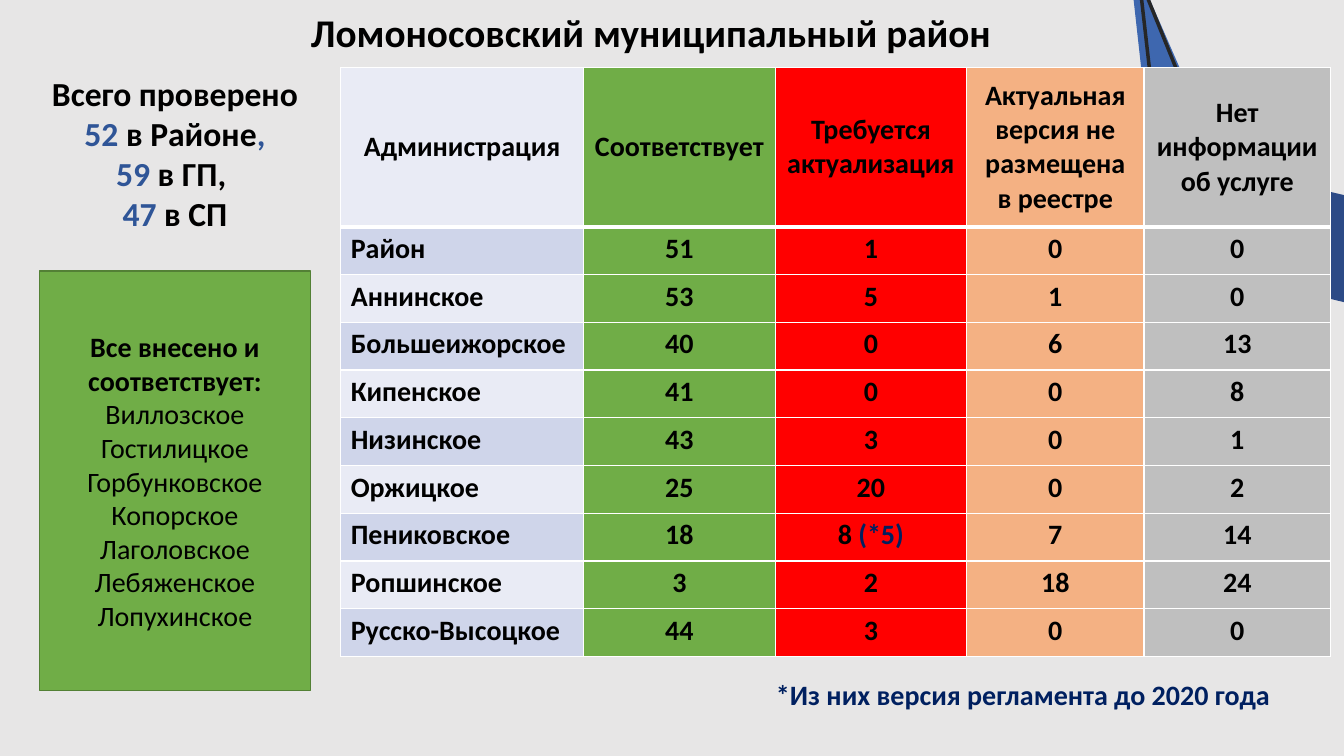
"""Build the district audit slide: a results table, two side panels and a footnote."""
import lxml.etree
import pptx
import pptx.dml.color
import pptx.enum.shapes
import pptx.enum.text
import pptx.oxml.ns
import pptx.util
from dataclasses import dataclass
from typing import Any, NamedTuple

WIDTH, HEIGHT = pptx.util.Inches(13.333), pptx.util.Inches(7.5)
FONT = "Calibri"
BLACK, WHITE, NAVY, BLUE = "000000", "FFFFFF", "002060", "2F5597"
GREEN, RED, PEACH, GREY = "70AD47", "FF0000", "F4B183", "BFBFBF"
PALE, DARK = "E9EBF5", "CFD5EA"
ALIGN = pptx.enum.text.PP_ALIGN
FIT = pptx.enum.text.MSO_AUTO_SIZE
MIDDLE = pptx.enum.text.MSO_ANCHOR.MIDDLE


class Run(NamedTuple):
    text: str
    color: str = BLACK
    bold: bool = True


class Box(NamedTuple):
    left: float
    top: float
    width: float
    height: float


class Column(NamedTuple):
    head: str
    width: float
    fill: str


@dataclass
class Label:
    box: Box
    lines: list[list[Run]]
    size: int
    align: Any = ALIGN.CENTER
    wrap: bool = True


@dataclass
class Shard:
    points: list[tuple[float, float]]
    fill: str = ""
    line: str = ""


SHARDS = [
    Shard([(109.73, 29.87), (90.9, 22), (86.48, 34.13), (107.48, 43.2)], fill="2C4A86"),
    Shard([(86.48, 34.13), (83.93, -6.67), (94.8, 37.6)], fill="3E67AF"),
    Shard([(87.15, 34.53), (84.75, -3.07), (94.28, 38.8)], line="262626"),
]

COLUMNS = [
    Column("Администрация", 18.08, PALE),
    Column("Соответствует", 14.25, GREEN),
    Column("Требуется актуализация", 14.25, RED),
    Column("Актуальная версия не размещена в реестре", 13.2, PEACH),
    Column("Нет информации об услуге", 13.88, GREY),
]
ROWS = [
    ("Район", 51, 1, 0, 0),
    ("Аннинское", 53, 5, 1, 0),
    ("Большеижорское", 40, 0, 6, 13),
    ("Кипенское", 41, 0, 0, 8),
    ("Низинское", 43, 3, 0, 1),
    ("Оржицкое", 25, 20, 0, 2),
    ("Пениковское", 18, [Run("8 "), Run("(*5)", NAVY)], 7, 14),
    ("Ропшинское", 3, 2, 18, 24),
    ("Русско-Высоцкое", 44, 3, 0, 0),
]
HEAD_ROW, BODY_ROW = 21.07, 6.32

PANEL = Box(2.93, 35.87, 20.18, 55.47)
PLACES = ["Виллозское", "Гостилицкое", "Горбунковское Копорское",
          "Лаголовское", "Лебяженское", "Лопухинское"]
LABELS = [
    Label(Box(2.93, 8.93, 20.18, 26.93), [
        [Run("Всего проверено ")],
        [Run("52 ", BLUE), Run("в Районе"), Run(",", BLUE)],
        [Run("59 ", BLUE), Run("в ГП, ")],
        [Run("47 ", BLUE), Run("в СП")],
    ], 24),
    Label(Box(21.15, 0.4, 54.53, 7.6),
          [[Run("Ломоносовский муниципальный район")]], 28, wrap=False),
    Label(Box(57, 88.93, 41.7, 5.87),
          [[Run("*Из них версия регламента до 2020 года", NAVY)]], 20, ALIGN.LEFT),
]


def across(share: float) -> int:
    return round(WIDTH * share / 100)


def down(share: float) -> int:
    return round(HEIGHT * share / 100)


def place(box: Box) -> tuple[int, int, int, int]:
    return across(box.left), down(box.top), across(box.width), down(box.height)


def paint(target: Any, color: str) -> None:
    target.solid()
    target.fore_color.rgb = pptx.dml.color.RGBColor.from_string(color)


def write(frame: Any, lines: list[list[Run]], size: int, align: Any) -> None:
    for index, line in enumerate(lines):
        para = frame.add_paragraph() if index else frame.paragraphs[0]
        para.alignment = align
        for item in line:
            run = para.add_run()
            run.text = item.text
            run.font.name = FONT
            run.font.size = pptx.util.Pt(size)
            run.font.bold = item.bold
            paint(run.font.fill, item.color)


def add_shard(slide: Any, shard: Shard) -> None:
    first, *rest = [(across(x), down(y)) for x, y in shard.points]
    pen = slide.shapes.build_freeform(*first)
    pen.add_line_segments(rest, close=True)
    shape = pen.convert_to_shape()
    shape.shadow.inherit = False
    if shard.fill:
        paint(shape.fill, shard.fill)
    else:
        shape.fill.background()
    if shard.line:
        paint(shape.line.fill, shard.line)
        shape.line.width = pptx.util.Pt(2.5)
    else:
        shape.line.fill.background()


def edge(cell: Any, row: int) -> None:
    widths = {"lnL": 1, "lnR": 1, "lnT": 3 if row == 1 else 1, "lnB": 1 if row else 3}
    props = cell._tc.get_or_add_tcPr()
    for side, width in widths.items():
        line = lxml.etree.SubElement(props, pptx.oxml.ns.qn(f"a:{side}"),
                                     w=str(pptx.util.Pt(width)))
        fill = lxml.etree.SubElement(line, pptx.oxml.ns.qn("a:solidFill"))
        lxml.etree.SubElement(fill, pptx.oxml.ns.qn("a:srgbClr"), val=WHITE)


def add_grid(slide: Any) -> None:
    box = Box(25.35, 8.93, sum(col.width for col in COLUMNS),
              HEAD_ROW + BODY_ROW * len(ROWS))
    table = slide.shapes.add_table(len(ROWS) + 1, len(COLUMNS), *place(box)).table
    for part, col in zip(table.columns, COLUMNS):
        part.width = across(col.width)
    heads = tuple(col.head for col in COLUMNS)
    for row, values in enumerate([heads, *ROWS]):
        table.rows[row].height = down(BODY_ROW if row else HEAD_ROW)
        for index, value in enumerate(values):
            cell = table.cell(row, index)
            edge(cell, row)
            striped = index == 0 and row % 2 == 1
            paint(cell.fill, DARK if striped else COLUMNS[index].fill)
            if row == 0:
                cell.vertical_anchor = MIDDLE
            runs = value if isinstance(value, list) else [Run(str(value))]
            align = ALIGN.LEFT if row and index == 0 else ALIGN.CENTER
            write(cell.text_frame, [runs], 20, align)


def add_panel(slide: Any) -> None:
    kind = pptx.enum.shapes.MSO_SHAPE.RECTANGLE
    shape = slide.shapes.add_shape(kind, *place(PANEL))
    shape.shadow.inherit = False
    paint(shape.fill, GREEN)
    paint(shape.line.fill, "538035")
    shape.line.width = pptx.util.Pt(1)
    shape.text_frame.word_wrap = True
    shape.text_frame.vertical_anchor = MIDDLE
    lines = [[Run("Все внесено и соответствует:")]]
    lines += [[Run(name, bold=False)] for name in PLACES]
    write(shape.text_frame, lines, 20, ALIGN.CENTER)


def add_label(slide: Any, label: Label) -> None:
    frame = slide.shapes.add_textbox(*place(label.box)).text_frame
    frame.word_wrap = label.wrap
    frame.auto_size = FIT.SHAPE_TO_FIT_TEXT
    write(frame, label.lines, label.size, label.align)


def main() -> None:
    deck = pptx.Presentation()
    deck.slide_width, deck.slide_height = WIDTH, HEIGHT
    slide = deck.slides.add_slide(deck.slide_layouts[6])
    paint(slide.background.fill, "E7E6E6")
    for shard in SHARDS:
        add_shard(slide, shard)
    add_grid(slide)
    add_panel(slide)
    for label in LABELS:
        add_label(slide, label)
    deck.save("out.pptx")


if __name__ == "__main__":
    main()
